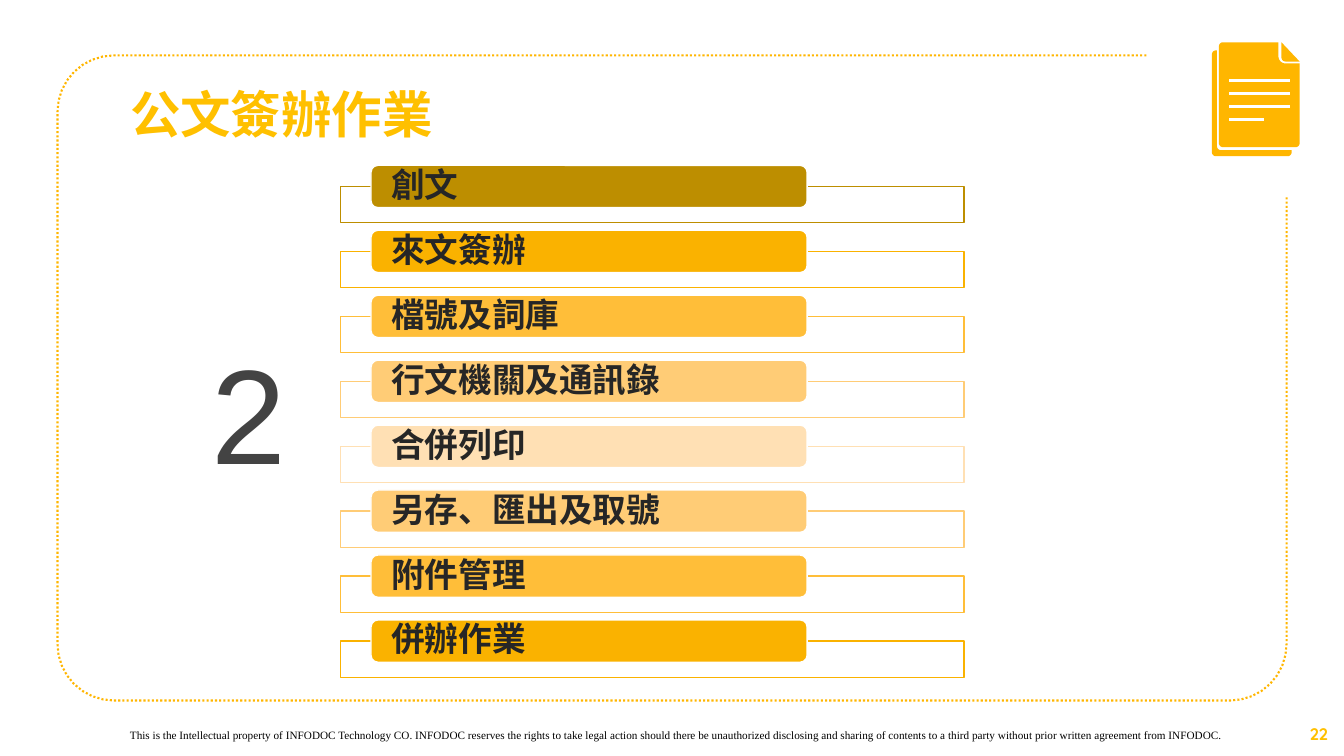
from collections import namedtuple
from math import cos, radians, sin

from lxml.etree import SubElement
from pptx import Presentation
from pptx.dml.color import RGBColor
from pptx.enum.dml import MSO_LINE
from pptx.enum.shapes import MSO_CONNECTOR as Connector, MSO_SHAPE as Shape
from pptx.enum.text import MSO_ANCHOR as Anchor, MSO_AUTO_SIZE as AutoSize, PP_ALIGN as Align
from pptx.oxml.ns import qn
from pptx.util import Inches, Pt

Box = namedtuple("Box", "left top width height")

COLORS = {
    "amber": "FFB600", "gold": "FFC000", "white": "FFFFFF", "black": "000000",
    "ink": "262626", "gray": "434343", "bronze": "BD8E00", "honey": "FAB200",
    "apricot": "FFBE39", "sand": "FFCC76", "cream": "FFE0B4",
}
CJK_FONT = "Noto Sans CJK SC"
FONTS = {
    "title": {"name": CJK_FONT, "size": Pt(36), "bold": True},
    "topic": {"name": "Quicksand", "size": Pt(24), "bold": True},
    "chapter": {"name": "Arial", "size": Pt(96), "bold": False},
    "notice": {"name": "Times New Roman", "size": Pt(8), "bold": False},
    "page": {"name": "Quicksand", "size": Pt(12), "bold": True},
}
TOPICS = [
    ("創文", "bronze"), ("來文簽辦", "honey"), ("檔號及詞庫", "apricot"),
    ("行文機關及通訊錄", "sand"), ("合併列印", "cream"), ("另存、匯出及取號", "sand"),
    ("附件管理", "apricot"), ("併辦作業", "honey"),
]
NOTICE = (
    "This is the Intellectual property of INFODOC Technology CO. INFODOC reserves the rights "
    "to take legal action should there be unauthorized disclosing and sharing of contents to a "
    "third party without prior written agreement from INFODOC."
)


def rgb(color):
    return RGBColor.from_string(COLORS[color])


def apply(target, values):
    for attribute, value in values.items():
        setattr(target, attribute, value)


def inches(box):
    return [Inches(length) for length in box]


def write(shape, text, font, color, align=Align.LEFT, frame=None, spacing=None):
    apply(shape.text_frame, {"word_wrap": True, "auto_size": AutoSize.NONE, **(frame or {})})
    paragraph = shape.text_frame.paragraphs[0]
    apply(paragraph, {"alignment": align, "line_spacing": spacing})
    run = paragraph.add_run()
    run.text = text
    apply(run.font, FONTS[font])
    run.font.color.rgb = rgb(color)
    if not text.isascii():
        SubElement(run.font._element, qn("a:ea")).set("typeface", CJK_FONT)


def paint(shape, fill=None, line=None, weight=1):
    shape.shadow.inherit = False
    for part, color in ((shape.fill, fill), (shape.line.fill, line)):
        if color:
            part.solid()
            part.fore_color.rgb = rgb(color)
        else:
            part.background()
    if line:
        shape.line.width = Pt(weight)


def corner(x, y, radius, start):
    angles = [radians(start - 90 * step / 8) for step in range(9)]
    return [(x + radius * cos(angle), y + radius * sin(angle)) for angle in angles]


def rounded_sides(box, radius):
    left, top = box.left + radius, box.top + radius
    right, bottom = box.left + box.width - radius, box.top + box.height - radius
    return (corner(left, top, radius, 270) + corner(left, bottom, radius, 180)
            + corner(right, bottom, radius, 90))


def outline(slide, points, closed=True):
    start, *rest = [(Inches(x), Inches(y)) for x, y in points]
    builder = slide.shapes.build_freeform(*start)
    builder.add_line_segments(rest, close=closed)
    return builder.convert_to_shape()


def add_border(slide, box):
    right = box.left + box.width
    points = [(right - 1.39, box.top), *rounded_sides(box, 0.56), (right, box.top + 1.4)]
    border = outline(slide, points, closed=False)
    paint(border, line="amber", weight=1.5)
    border.line.dash_style = MSO_LINE.ROUND_DOT


def add_document_icon(slide, box):
    back = Box(box.left, box.top + 0.08, 0.79, 1.05)
    front = Box(box.left + 0.07, box.top, 0.8, 1.04)
    back_right, back_bottom = back.left + back.width, back.top + back.height
    right, top = front.left + front.width, front.top
    notch = corner(back.left + 0.09, back_bottom - 0.1, 0.04, 180)[::-1]
    cut = corner(right - 0.14, top + 0.14, 0.07, 180)[::-1]
    fold = corner(right - 0.14, top + 0.15, 0.04, 180)
    pages = [
        [*rounded_sides(back, 0.04), (back_right, back_bottom - 0.06), *notch,
         (back.left + 0.05, back.top)],
        [*rounded_sides(front, 0.04), (right, top + 0.21), *cut, (right - 0.21, top)],
        [(right - 0.18, top), *fold, (right, top + 0.19)],
    ]
    for page in pages:
        paint(outline(slide, page), fill="amber")
    for row, length in enumerate((0.6, 0.6, 0.6, 0.35)):
        left, y = Inches(front.left + 0.1), Inches(top + 0.375 + 0.13 * row)
        rule = slide.shapes.add_connector(
            Connector.STRAIGHT, left, y, left + Inches(length), y)
        rule.line.color.rgb = rgb("white")
        rule.line.width = Pt(2.2)
        SubElement(rule._element.spPr, qn("a:effectLst"))


def add_title(slide, box, text):
    title = slide.shapes.title
    apply(title, dict(zip(Box._fields, inches(box))))
    write(title, text, "title", "gold", frame={"vertical_anchor": Anchor.TOP}, spacing=0.9)


def add_topics(slide, box):
    bar_height, tray_height, tray_drop = 0.42, 0.36, 0.21
    pitch = (box.height - tray_drop - tray_height) / (len(TOPICS) - 1)
    margins = {"margin_left": Inches(0.18), "margin_right": Inches(0.18),
               "margin_top": Inches(0.02), "margin_bottom": Inches(0.02),
               "vertical_anchor": Anchor.MIDDLE}
    for row, (topic, color) in enumerate(TOPICS):
        top = box.top + row * pitch
        tray = slide.shapes.add_shape(
            Shape.RECTANGLE, *inches((box.left, top + tray_drop, box.width, tray_height)))
        paint(tray, fill="white", line=color)
        bar = slide.shapes.add_shape(
            Shape.ROUNDED_RECTANGLE, *inches((box.left + 0.3, top, box.width * 0.7, bar_height)))
        paint(bar, fill=color, line="white")
        write(bar, topic, "topic", "ink", frame=margins, spacing=0.9)


def add_label(slide, box, text, font, color, align=Align.LEFT, anchor=Anchor.TOP):
    label = slide.shapes.add_textbox(*inches(box))
    write(label, text, font, color, align, {"vertical_anchor": anchor})


def main():
    deck = Presentation()
    apply(deck, {"slide_width": Inches(13.33), "slide_height": Inches(7.5)})
    slide = deck.slides.add_slide(deck.slide_layouts[5])
    add_border(slide, Box(0.57, 0.55, 12.19, 6.4))
    add_document_icon(slide, Box(12.02, 0.42, 0.87, 1.13))
    add_title(slide, Box(1.19, 0.84, 4.65, 0.74), "公文簽辦作業")
    add_topics(slide, Box(3.38, 1.64, 6.18, 5.08))
    add_label(slide, Box(1.94, 3.06, 1.05, 2.03), "2", "chapter", "gray",
              Align.CENTER, Anchor.MIDDLE)
    add_label(slide, Box(1.19, 7.18, 11.11, 0.24), NOTICE, "notice", "black")
    add_label(slide, Box(10.27, 7.08, 3, 0.4), "22", "page", "gold",
              Align.RIGHT, Anchor.MIDDLE)
    deck.save("out.pptx")


if __name__ == "__main__":
    main()
